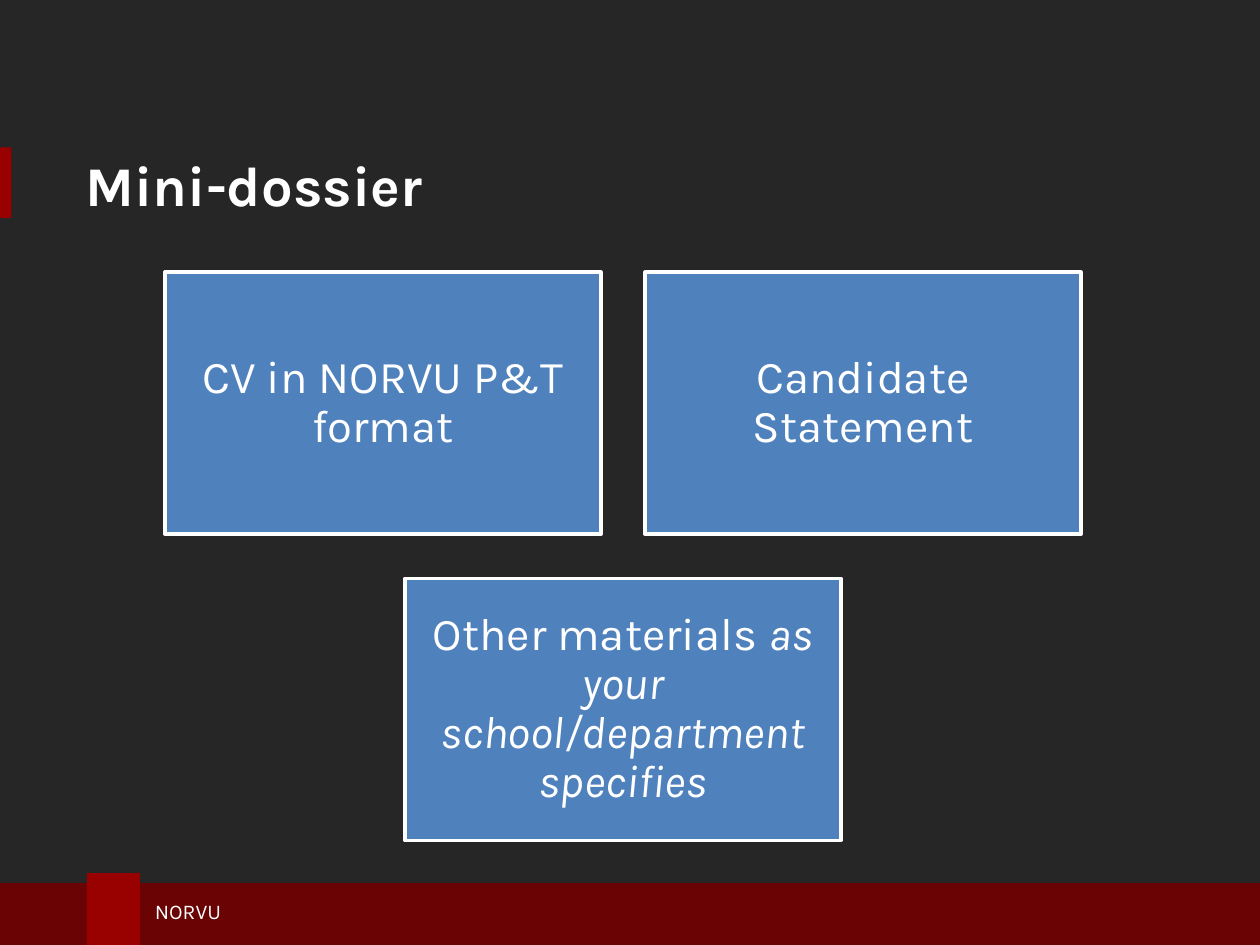
from pptx import Presentation
from pptx.dml.color import RGBColor
from pptx.enum.shapes import MSO_SHAPE as Shape
from pptx.enum.text import MSO_ANCHOR as Anchor, PP_ALIGN as Align
from pptx.util import Inches, Pt

CHARCOAL = RGBColor(0x26, 0x26, 0x26)
MAROON = RGBColor(0x69, 0x03, 0x04)
CRIMSON = RGBColor(0x99, 0x00, 0x00)
BLUE = RGBColor(0x4F, 0x81, 0xBD)
WHITE = RGBColor(0xFF, 0xFF, 0xFF)
FONT = "Karla"

# Card grid, in inches
CARD_W, CARD_H, GAP = 3.46, 2.08, 0.35
GRID_LEFT, GRID_TOP = 1.31, 2.16
CARD_INSET = 0.11

# Column, row and (text, italic) runs of each card
CARDS = [
    (0, 0, [("CV in NORVU P&T format", False)]),
    (1, 0, [("Candidate Statement", False)]),
    (0.5, 1, [("Other materials ", False),
              ("as your school/department specifies", True)]),
]


def add_rect(s, x, y, w, h, fill):
    sp = s.shapes.add_shape(Shape.RECTANGLE, Inches(x), Inches(y), Inches(w), Inches(h))
    sp.shadow.inherit = False
    sp.fill.solid()
    sp.fill.fore_color.rgb = fill
    sp.line.fill.background()
    return sp


def style_run(r, size, bold=False, italic=False):
    r.font.name = FONT
    r.font.size = Pt(size)
    r.font.color.rgb = WHITE
    r.font.bold = bold
    r.font.italic = italic


def add_label(s, x, y, w, h, text, size, bold=False):
    tf = s.shapes.add_textbox(Inches(x), Inches(y), Inches(w), Inches(h)).text_frame
    tf.word_wrap = True
    tf.vertical_anchor = Anchor.MIDDLE
    tf.text = text
    style_run(tf.paragraphs[0].runs[0], size, bold)


def add_card(s, col, row, runs):
    x = GRID_LEFT + col * (CARD_W + GAP)
    y = GRID_TOP + row * (CARD_H + GAP)
    sp = add_rect(s, x, y, CARD_W, CARD_H, BLUE)
    sp.line.color.rgb = WHITE
    sp.line.width = Pt(2)

    tf = sp.text_frame
    tf.word_wrap = True
    tf.vertical_anchor = Anchor.MIDDLE
    tf.margin_left = tf.margin_right = Inches(CARD_INSET)
    tf.margin_top = tf.margin_bottom = Inches(CARD_INSET)
    p = tf.paragraphs[0]
    p.alignment = Align.CENTER
    p.line_spacing = 0.9
    for text, italic in runs:
        r = p.add_run()
        r.text = text
        style_run(r, 26, italic=italic)


def main():
    prs = Presentation()
    prs.slide_width, prs.slide_height = Inches(10), Inches(7.5)
    s = prs.slides.add_slide(prs.slide_layouts[6])
    s.background.fill.solid()
    s.background.fill.fore_color.rgb = CHARCOAL

    # Footer band
    add_rect(s, -0.03, 7.01, 10.09, 0.5, MAROON)
    add_rect(s, 0.69, 6.93, 0.42, 0.58, CRIMSON)
    add_label(s, 1.13, 7.08, 3.95, 0.3, "NORVU", 12)

    # Title with its accent bar
    add_rect(s, 0, 1.17, 0.09, 0.56, CRIMSON)
    add_label(s, 0.58, 1.11, 8.75, 0.7, "Mini-dossier", 32, bold=True)

    # Dossier contents
    for col, row, runs in CARDS:
        add_card(s, col, row, runs)

    prs.save("out.pptx")


if __name__ == "__main__":
    main()
